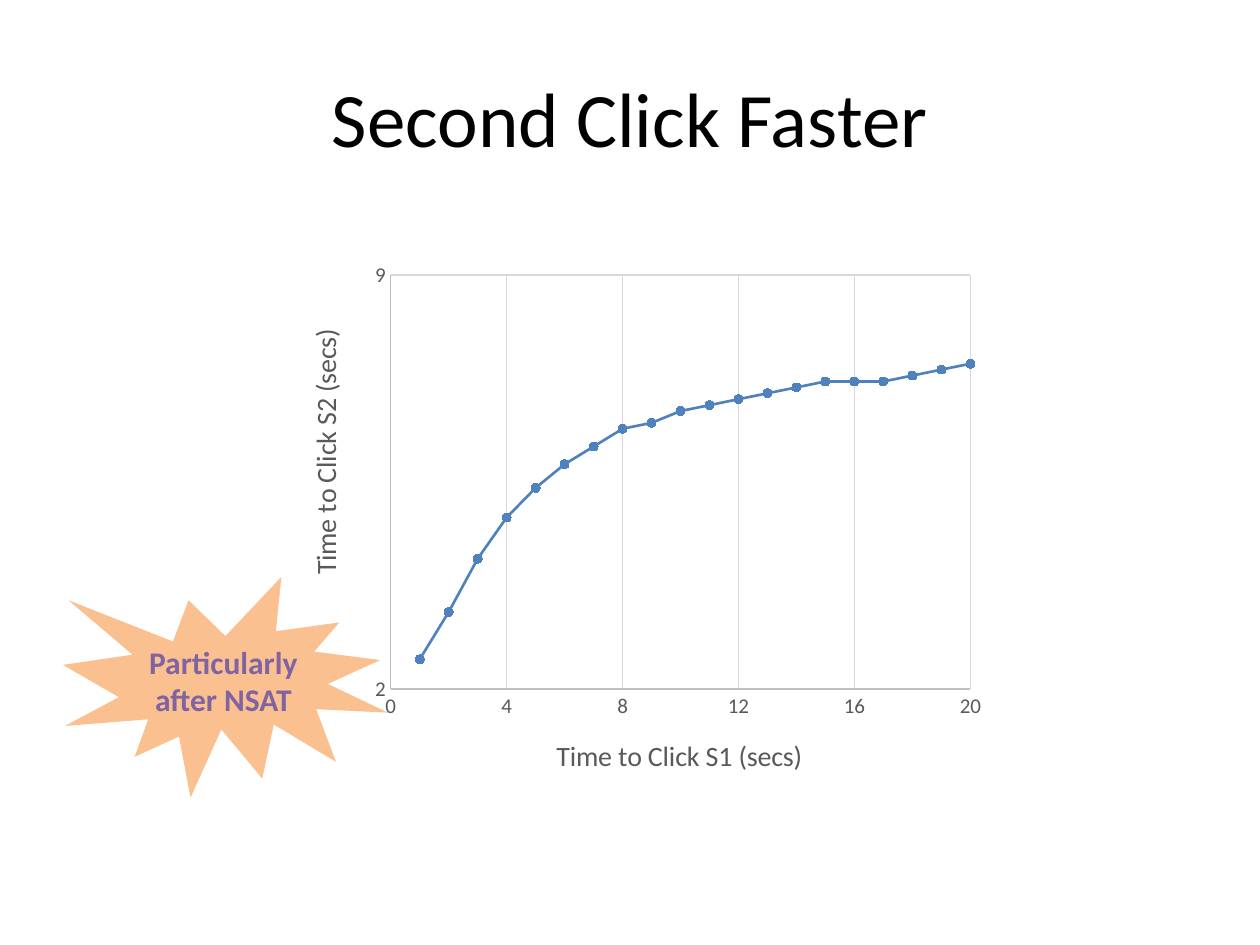
from pptx import Presentation
from pptx.chart.data import XyChartData
from pptx.dml.color import RGBColor
from pptx.enum.chart import XL_CHART_TYPE as ChartType, XL_MARKER_STYLE as Marker
from pptx.enum.chart import XL_TICK_MARK as TickMark
from pptx.enum.shapes import MSO_SHAPE as Shape
from pptx.enum.text import MSO_ANCHOR as Anchor, PP_ALIGN as Align
from pptx.oxml import parse_xml
from pptx.oxml.ns import nsdecls, qn
from pptx.util import Cm, Pt

BLUE = "4F81BD"


def style_font(font, size, color, bold=False):
    font.name = "Calibri"
    font.size = Pt(size)
    font.bold = bold
    font.color.rgb = RGBColor.from_string(color)


def place(element, index, **fractions):
    """Give a chart part a fixed layout in fractions of the chart's size."""
    for old in element.findall(qn("c:layout")):
        element.remove(old)
    target = '<c:layoutTarget val="inner"/>' if "w" in fractions else ""
    modes = "".join(f'<c:{key}Mode val="edge"/>' for key in "xy")
    values = "".join(f'<c:{key} val="{value}"/>' for key, value in fractions.items())
    element.insert(index, parse_xml(
        f'<c:layout {nsdecls("c")}><c:manualLayout>{target}{modes}{values}'
        "</c:manualLayout></c:layout>"))


deck = Presentation()
deck.slide_width, deck.slide_height = Cm(25.4), Cm(19.05)
slide = deck.slides.add_slide(deck.slide_layouts[6])

# Title
title = slide.shapes.add_textbox(Cm(1.27), Cm(0.76), Cm(22.86), Cm(3.18))
title.text_frame.word_wrap = True
title.text_frame.vertical_anchor = Anchor.MIDDLE
title.text_frame.text = "Second Click Faster"
para = title.text_frame.paragraphs[0]
para.alignment = Align.CENTER
style_font(para.runs[0].font, 44, "000000")

# Chart of second click time against first click time
second_clicks = [2.5, 3.3, 4.2, 4.9, 5.4, 5.8, 6.1, 6.4, 6.5, 6.7,
                 6.8, 6.9, 7, 7.1, 7.2, 7.2, 7.2, 7.3, 7.4, 7.5]
data = XyChartData()
points = data.add_series("Series 1")
points.add_data_point(None, None)
for first_click, second_click in enumerate(second_clicks, start=1):
    points.add_data_point(first_click, second_click)

chart = slide.shapes.add_chart(ChartType.XY_SCATTER_LINES, Cm(5.72), Cm(4.81),
                               Cm(17.98), Cm(12.27), data).chart
chart.has_title = False
chart.has_legend = False
style_font(chart.font, 10, "000000")
chart.plots[0].vary_by_categories = False
place(chart.plots[0]._element.getparent(), 0, x=0.12, y=0.06, w=0.65, h=0.68)

series = chart.plots[0].series[0]
# The first point is empty, so its cached value must be absent
for point in list(series._element.iter(qn("c:pt"))):
    if point.findtext(qn("c:v")) in ("None", "", None):
        point.getparent().remove(point)
series.smooth = False
series.format.line.color.rgb = RGBColor.from_string(BLUE)
series.format.line.width = Pt(1.5)
series.marker.style = Marker.CIRCLE
series.marker.size = 5
series.marker.format.fill.solid()
series.marker.format.fill.fore_color.rgb = RGBColor.from_string(BLUE)
series.marker.format.line.color.rgb = RGBColor.from_string(BLUE)

axes = [
    (chart.category_axis, "Time to Click S1 (secs)", 0, 20, 4, 0.3, 0.81),
    (chart.value_axis, "Time to Click S2 (secs)", 2, 9, 7, 0.02, 0.14),
]
for axis, caption, low, high, step, left, top in axes:
    axis.minimum_scale, axis.maximum_scale, axis.major_unit = low, high, step
    axis.major_tick_mark = axis.minor_tick_mark = TickMark.NONE
    axis.has_major_gridlines = True
    for line, color in ((axis.format.line, "BFBFBF"),
                        (axis.major_gridlines.format.line, "D9D9D9")):
        line.color.rgb = RGBColor.from_string(color)
        line.width = Pt(0.75)
    style_font(axis.tick_labels.font, 12, "595959")
    axis.tick_labels.number_format = "General"
    axis.tick_labels.number_format_is_linked = False
    frame = axis.axis_title.text_frame
    frame.text = caption
    style_font(frame.paragraphs[0].runs[0].font, 16, "595959")
    place(axis.axis_title._element, 1, x=left, y=top)
    if axis is chart.value_axis:
        body = axis.axis_title._element.find(".//" + qn("a:bodyPr"))
        body.set("rot", "-5400000")
        body.set("vert", "horz")

# Burst callout
burst = slide.shapes.add_shape(Shape.EXPLOSION1, Cm(1.27), Cm(11.63), Cm(6.55), Cm(4.45))
burst.shadow.inherit = False
burst.fill.solid()
burst.fill.fore_color.rgb = RGBColor.from_string("FAC090")
burst.line.fill.background()
burst.text_frame.word_wrap = True
burst.text_frame.vertical_anchor = Anchor.MIDDLE
burst.text_frame.text = "Particularly after NSAT"
para = burst.text_frame.paragraphs[0]
para.alignment = Align.CENTER
style_font(para.runs[0].font, 18, "8064A2", bold=True)

deck.save("out.pptx")
